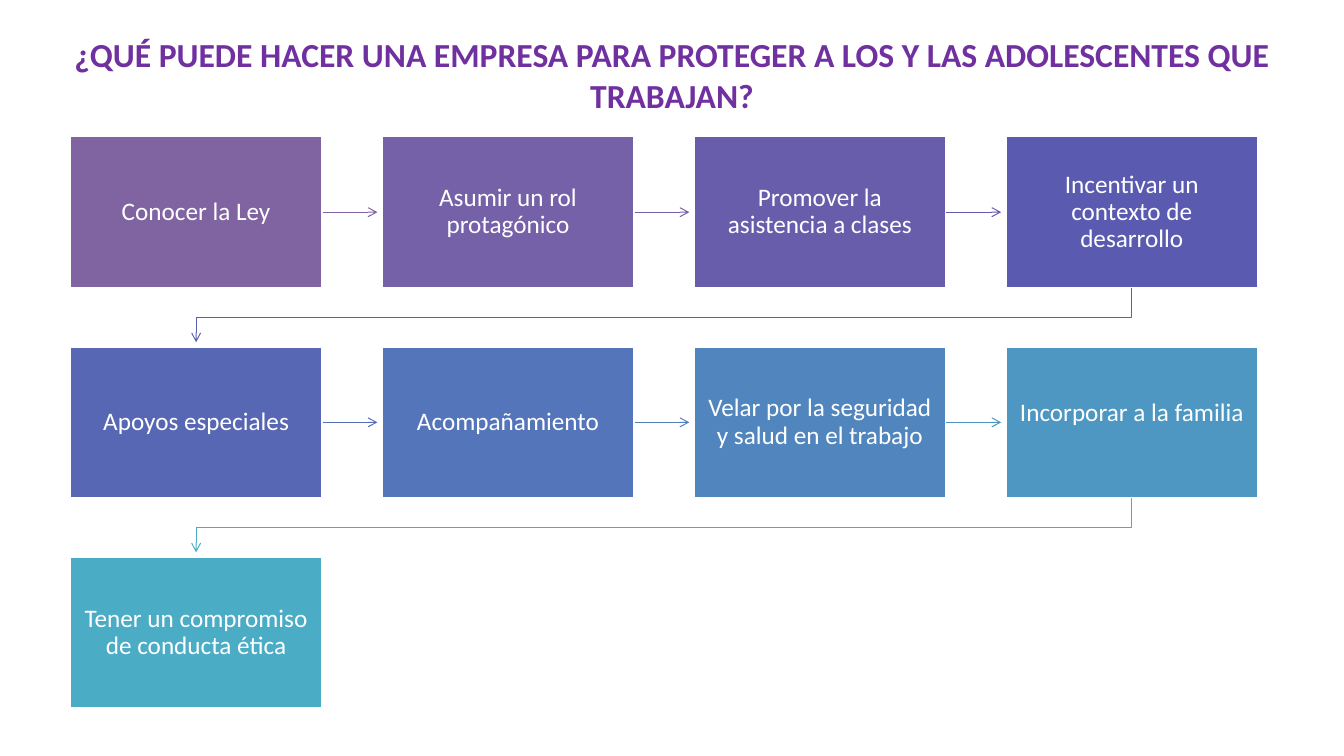
from lxml import etree
from pptx import Presentation
from pptx.dml.color import RGBColor
from pptx.enum import shapes, text
from pptx.oxml import ns
from pptx.util import Inches, Pt

COLORS = {"title": "7030A0", "white": "FFFFFF"}
FONT = "Calibri"
TITLE = "¿QUÉ PUEDE HACER UNA EMPRESA PARA PROTEGER A LOS Y LAS ADOLESCENTES QUE TRABAJAN?"
STEPS = [
    ("Conocer la Ley", "8064A2", "8064A2"),
    ("Asumir un rol protagónico", "7561A7", "7460A7"),
    ("Promover la asistencia a clases", "685DAB", "645DAD"),
    ("Incentivar un contexto de desarrollo", "5A5BB0", "5960B2"),
    ("Apoyos especiales", "5767B4", "556EB7"),
    ("Acompañamiento", "5475B9", "5280BC"),
    ("Velar por la seguridad y salud en el trabajo", "5185BD", "4E94C1"),
    ("Incorporar a la familia", "4E97C2", "4BACC6"),
    ("Tener un compromiso de conducta ética", "4BACC6", None),
]
RAISED_STEP = "Incorporar a la familia"
COLUMNS, ROWS = 4, 3
STEP_WIDTH, STEP_HEIGHT = Inches(2.51), Inches(1.51)
ARROW_GAP = Inches(0.04)
INSET = Inches(0.14)


def set_font(para, size, color, bold=False):
    para.alignment = text.PP_ALIGN.CENTER
    para.font.name = FONT
    para.font.size = Pt(size)
    para.font.bold = bold
    para.font.color.rgb = RGBColor.from_string(color)


def add_title(page, left, top, width, height):
    title = page.shapes.title
    title.left, title.top, title.width, title.height = left, top, width, height
    frame = title.text_frame
    frame.text = TITLE
    frame.word_wrap = True
    frame.auto_size = text.MSO_AUTO_SIZE.NONE
    frame.vertical_anchor = text.MSO_ANCHOR.TOP
    frame.margin_top = Inches(0.08)
    set_font(frame.paragraphs[0], 24, COLORS["title"], bold=True)


def add_step(page, left, top, label, fill):
    step = page.shapes.add_shape(
        shapes.MSO_SHAPE.RECTANGLE, left, top, STEP_WIDTH, STEP_HEIGHT)
    step.shadow.inherit = False
    step.fill.solid()
    step.fill.fore_color.rgb = RGBColor.from_string(fill)
    step.line.color.rgb = RGBColor.from_string(COLORS["white"])
    step.line.width = Pt(2)
    frame = step.text_frame
    frame.text = label
    frame.word_wrap = True
    frame.vertical_anchor = text.MSO_ANCHOR.MIDDLE
    frame.margin_left = frame.margin_right = frame.margin_top = INSET
    frame.margin_bottom = Inches(0.31) if label == RAISED_STEP else INSET
    para = frame.paragraphs[0]
    para.line_spacing = 0.9
    set_font(para, 18, COLORS["white"])
    return step


def style_arrow(arrow, color):
    arrow.line.color.rgb = RGBColor.from_string(color)
    arrow.line.width = Pt(0.75)
    outline = arrow.line._get_or_add_ln()
    etree.SubElement(outline, ns.qn("a:tailEnd"), type="arrow")


def add_straight_arrow(page, start, end, color):
    middle = start.top + start.height // 2
    arrow = page.shapes.add_connector(
        shapes.MSO_CONNECTOR.STRAIGHT,
        start.left + start.width, middle, end.left - ARROW_GAP, middle)
    arrow.begin_connect(start, 3)
    style_arrow(arrow, color)
    etree.SubElement(arrow._element.spPr, ns.qn("a:effectLst"))


def add_turn_arrow(page, start, end, color):
    start_x = start.left + start.width // 2
    end_x = end.left + end.width // 2
    bottom = start.top + start.height
    bend = (bottom + end.top) // 2
    builder = page.shapes.build_freeform(start_x, bottom)
    builder.add_line_segments(
        [(start_x, bend), (end_x, bend), (end_x, end.top - ARROW_GAP)], close=False)
    arrow = builder.convert_to_shape()
    arrow.shadow.inherit = False
    arrow.fill.background()
    style_arrow(arrow, color)


def add_flow(page, left, top, width, height):
    column_pitch = (width - STEP_WIDTH) // (COLUMNS - 1)
    row_pitch = (height - STEP_HEIGHT) // (ROWS - 1)
    steps = []
    for index, (label, fill, _) in enumerate(STEPS):
        row, column = divmod(index, COLUMNS)
        steps.append(add_step(
            page, left + column * column_pitch, top + row * row_pitch, label, fill))
    for start, end, (_, _, color) in zip(steps, steps[1:], STEPS):
        add_arrow = add_straight_arrow if start.top == end.top else add_turn_arrow
        add_arrow(page, start, end, color)


def main():
    deck = Presentation()
    deck.slide_width, deck.slide_height = Inches(13.33), Inches(7.5)
    page = deck.slides.add_slide(deck.slide_layouts.get_by_name("Title Only"))
    add_title(page, 0, Inches(0.26), deck.slide_width, Inches(1.08))
    add_flow(page, Inches(0.69), Inches(1.35), Inches(11.79), Inches(5.68))
    deck.save("out.pptx")


if __name__ == "__main__":
    main()
